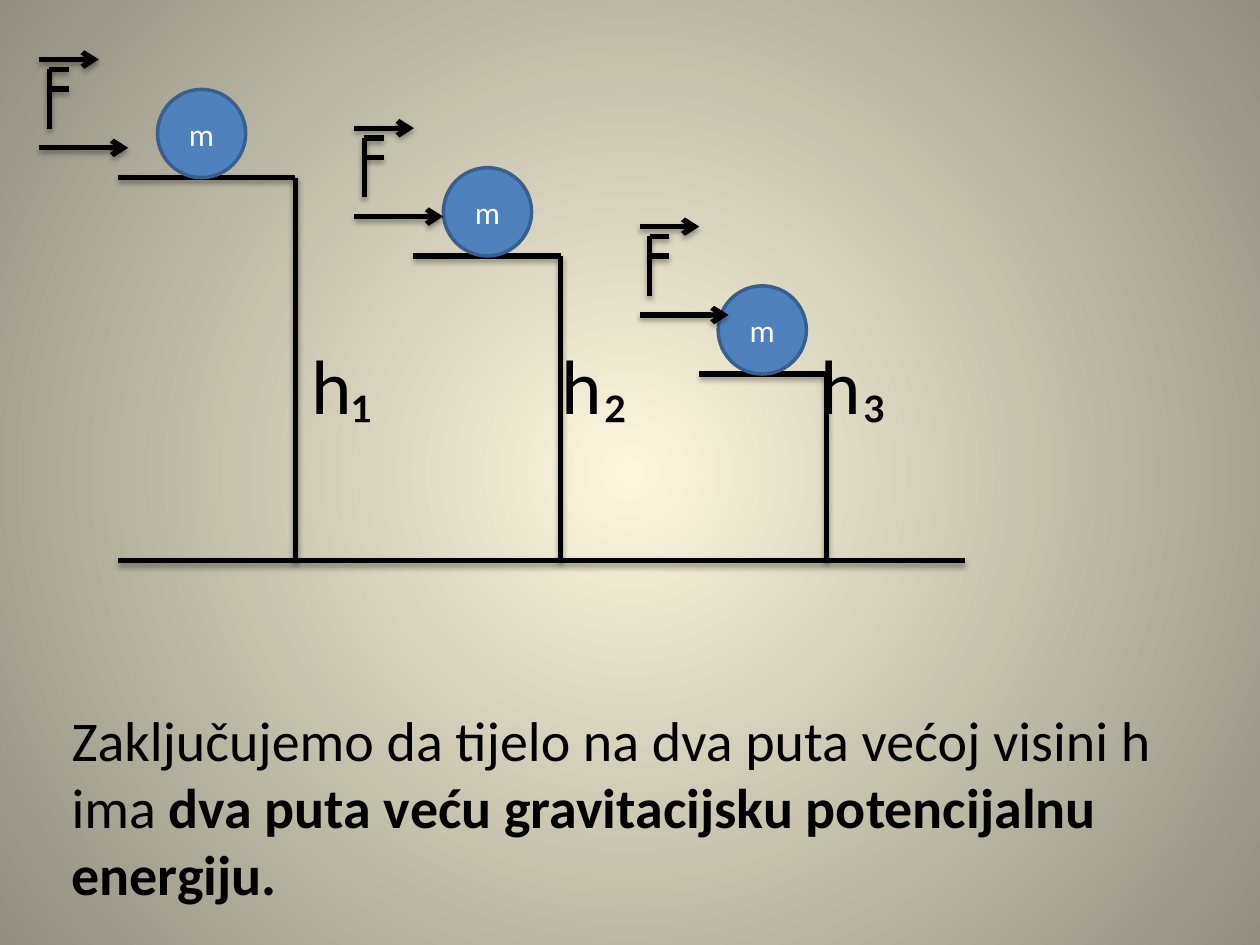
from lxml import etree
from pptx import Presentation
from pptx.dml.color import RGBColor
from pptx.enum.shapes import MSO_CONNECTOR, MSO_SHAPE
from pptx.enum.text import MSO_ANCHOR, PP_ALIGN
from pptx.oxml import parse_xml
from pptx.oxml.ns import qn
from pptx.util import Pt

STRAIGHT = MSO_CONNECTOR.STRAIGHT
OVAL = MSO_SHAPE.OVAL
MIDDLE, BOTTOM = MSO_ANCHOR.MIDDLE, MSO_ANCHOR.BOTTOM
CENTER, LEFT = PP_ALIGN.CENTER, PP_ALIGN.LEFT

FONT = "Calibri"
COLORS = {"ink": "000000", "ball": "4F81BD", "rim": "3A5F8C",
          "label": "FFFFFF", "glow": "FCF7DD", "edge": "918E81"}
NAMESPACE = 'xmlns:a="http://schemas.openxmlformats.org/drawingml/2006/main"'

GROUND = 320.5
BALL_SIZE = 50.4
# Each step: ledge left, ledge top, wall x, ball left, force origin
STEPS = [
    (67.5, 101.5, 168.75, 90, (22.5, 34)),
    (236.25, 146.25, 320.5, 253.4, (202.5, 73.25)),
    (399.5, 213.75, 472.5, 410.4, (365.6, 129.5)),
]
LABEL_TABS = (137, 280, 428)


def rgb(name):
    return RGBColor.from_string(COLORS[name])


def paint_background(page):
    fill = page.background.fill
    fill.gradient()
    for stop, name in zip(fill.gradient_stops, ("glow", "edge")):
        stop.color.rgb = rgb(name)
    fill.gradient_stops[0].position = 0
    fill.gradient_stops[1].position = 1
    # Turn the linear gradient into a circular one
    gradient = page.background._cSld.find(".//" + qn("a:gradFill"))
    gradient.remove(gradient.find(qn("a:lin")))
    gradient.append(parse_xml(
        f'<a:path {NAMESPACE} path="circle">'
        '<a:fillToRect l="50000" t="50000" r="50000" b="50000"/></a:path>'))


def add_line(page, start, end, arrow=False):
    line = page.shapes.add_connector(
        STRAIGHT, *(Pt(value) for value in (*start, *end)))
    line.line.width = Pt(3)
    line.line.color.rgb = rgb("ink")
    if arrow:
        etree.SubElement(line.line._get_or_add_ln(), qn("a:tailEnd"), type="arrow")
    line._element.spPr.append(parse_xml(
        f'<a:effectLst {NAMESPACE}><a:outerShdw blurRad="{Pt(3.1)}" '
        f'dist="{Pt(1.8)}" dir="5400000" rotWithShape="0">'
        f'<a:srgbClr val="{COLORS["ink"]}"><a:alpha val="35000"/></a:srgbClr>'
        '</a:outerShdw></a:effectLst>'))


def add_text(para, text, size=18, color="ink", bold=False, align=LEFT):
    para.alignment = align
    span = para.add_run()
    span.text = text
    span.font.name = FONT
    span.font.size = Pt(size)
    span.font.bold = bold
    span.font.color.rgb = rgb(color)


def add_ball(page, left, top):
    ball = page.shapes.add_shape(
        OVAL, Pt(left), Pt(top), Pt(BALL_SIZE), Pt(BALL_SIZE))
    ball.shadow.inherit = False
    ball.fill.solid()
    ball.fill.fore_color.rgb = rgb("ball")
    ball.line.color.rgb = rgb("rim")
    ball.line.width = Pt(2)
    ball.text_frame.vertical_anchor = MIDDLE
    add_text(ball.text_frame.paragraphs[0], "m", color="label", align=CENTER)


def add_force(page, x, y):
    # Force arrow, then the letter F drawn with lines and its vector arrow
    add_line(page, (x, y + 50.5), (x + 50.75, y + 50.5), arrow=True)
    stem, head = x + 5.6, y + 5.6
    add_line(page, (stem, head), (stem, head + 34))
    for bar in (head, head + 11.25):
        add_line(page, (stem, bar), (stem + 11.25, bar))
    add_line(page, (x, y), (x + 34, y), arrow=True)


def add_wording(page):
    box = page.shapes.add_textbox(Pt(33.84), Pt(22.32), Pt(650.16), Pt(501.84))
    frame = box.text_frame
    frame.word_wrap = True
    frame.vertical_anchor = BOTTOM
    frame.margin_bottom = Pt(6)
    # Height labels on tab stops
    labels = frame.paragraphs[0]
    add_text(labels, "\th₁\th₂\th₃", size=44)
    tabs = etree.SubElement(labels._p.get_or_add_pPr(), qn("a:tabLst"))
    for stop in LABEL_TABS:
        etree.SubElement(tabs, qn("a:tab"), pos=str(Pt(stop)), algn="l")
    # Conclusion
    conclusion = frame.add_paragraph()
    conclusion.space_before = Pt(157)
    add_text(conclusion, "Zaključujemo da tijelo na dva puta većoj visini h ima ",
             size=32)
    add_text(conclusion, "dva puta veću gravitacijsku potencijalnu energiju.",
             size=32, bold=True)


def main():
    deck = Presentation()
    deck.slide_width, deck.slide_height = Pt(720), Pt(540)
    page = deck.slides.add_slide(deck.slide_layouts[6])
    paint_background(page)
    add_wording(page)
    # Ledges and walls
    for left, top, wall, _, _ in STEPS:
        add_line(page, (wall, top), (wall, GROUND))
        add_line(page, (left, top), (wall, top))
    # Balls resting on the ledges
    for _, top, _, ball_left, _ in STEPS:
        add_ball(page, ball_left, top - BALL_SIZE)
    # Forces
    for *_, origin in STEPS:
        add_force(page, *origin)
    # Ground
    add_line(page, (67.5, GROUND), (551.25, GROUND))
    deck.save("out.pptx")


if __name__ == "__main__":
    main()
